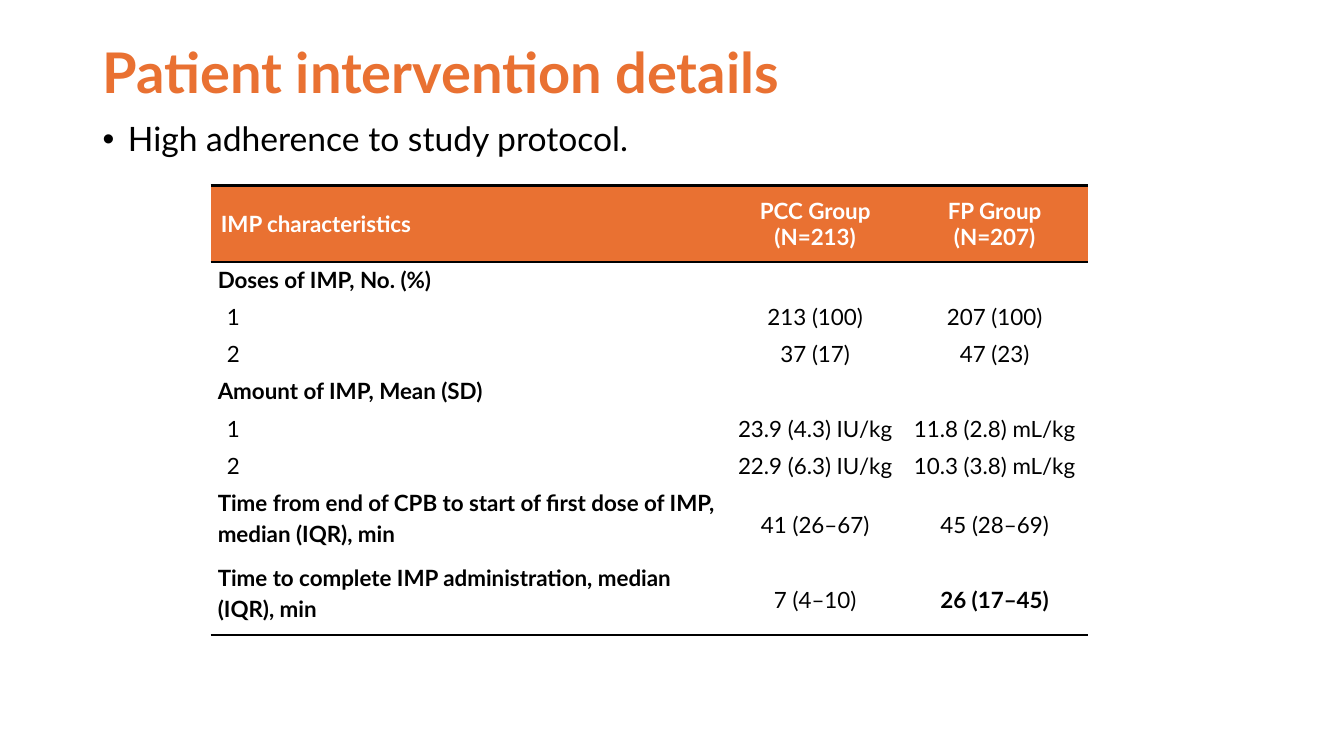
from pptx import Presentation
from pptx.dml.color import RGBColor
from pptx.enum.text import MSO_ANCHOR, PP_ALIGN
from pptx.oxml.ns import qn
from pptx.util import Inches, Pt
from lxml.etree import SubElement

FONT, ORANGE, BLACK, WHITE = "Lato", "E97132", "000000", "FFFFFF"
COLUMN_WIDTHS = [5.14, 1.71, 1.85]
ROW_HEIGHTS = [0.76] + [0.37] * 6 + [0.74] * 2
CHARACTERISTICS = [
    ("IMP characteristics", "PCC Group (N=213)", "FP Group (N=207)"),
    ("Doses of IMP, No. (%)", "", ""),
    ("1", "213 (100)", "207 (100)"),
    ("2", "37 (17)", "47 (23)"),
    ("Amount of IMP, Mean (SD)", "", ""),
    ("1", "23.9 (4.3) IU/kg", "11.8 (2.8) mL/kg"),
    ("2", "22.9 (6.3) IU/kg", "10.3 (3.8) mL/kg"),
    ("Time from end of CPB to start of first dose of IMP, median (IQR), min",
     "41 (26–67)", "45 (28–69)"),
    ("Time to complete IMP administration, median (IQR), min",
     "7 (4–10)", "26 (17–45)"),
]
HIGHLIGHT = "26 (17–45)"


def rgb(value):
    return RGBColor.from_string(value)


class SlideBuilder:
    def __init__(self, page):
        self.page = page

    def style(self, para, size, color, bold=False):
        para.font.name = FONT
        para.font.size = Pt(size)
        para.font.bold = bold
        para.font.color.rgb = rgb(color)

    def indent(self, para, left, first=0):
        properties = para._p.get_or_add_pPr()
        properties.set("marL", str(Inches(left)))
        properties.set("indent", str(Inches(first)))
        return properties

    def text(self, words, left, top, width, height, size, color, bold=False, bullet=False):
        box = self.page.shapes.add_textbox(
            Inches(left), Inches(top), Inches(width), Inches(height))
        box.text_frame.word_wrap = True
        para = box.text_frame.paragraphs[0]
        para.text = words
        para.line_spacing = 0.9
        if bullet:
            properties = self.indent(para, 0.25, -0.25)
            SubElement(properties, qn("a:buFont"), typeface="Arial")
            SubElement(properties, qn("a:buChar"), char="•")
        self.style(para, size, color, bold)

    def borders(self, cell, ruled):
        """Draw black rules on the edges in ruled and clear the others."""
        properties = cell._tc.get_or_add_tcPr()
        for edge in "LRTB":
            line = SubElement(properties, qn(f"a:ln{edge}"), w=str(Pt(2)))
            if edge in ruled:
                fill = SubElement(line, qn("a:solidFill"))
                SubElement(fill, qn("a:srgbClr"), val=BLACK)
            else:
                SubElement(line, qn("a:noFill"))

    def cell(self, cell, words, row, column):
        header, last = row == 0, row == len(CHARACTERISTICS) - 1
        ruled = "TB" if header else "T" * (row == 1) + "B" * last
        self.borders(cell, ruled)
        para = cell.text_frame.paragraphs[0]
        para.text = words
        if column:
            para.alignment = PP_ALIGN.CENTER
        if header:
            cell.fill.solid()
            cell.fill.fore_color.rgb = rgb(ORANGE)
        else:
            cell.fill.background()
            cell.margin_left = cell.margin_right = Inches(0.07)
            cell.margin_top = cell.margin_bottom = 0
            para.line_spacing = 1.15
            para.space_after = Pt(10)
        if header or (column and ROW_HEIGHTS[row] > 0.5):
            cell.vertical_anchor = MSO_ANCHOR.MIDDLE
        dose = column == 0 and words.isdigit()
        if dose:
            self.indent(para, 0.09)
        bold = header or words == HIGHLIGHT or (column == 0 and not dose)
        self.style(para, 16, WHITE if header else BLACK, bold)

    def table(self, rows, left, top):
        frame = self.page.shapes.add_table(
            len(rows), len(COLUMN_WIDTHS), Inches(left), Inches(top),
            Inches(sum(COLUMN_WIDTHS)), Inches(sum(ROW_HEIGHTS)))
        table = frame.table
        table.first_row = table.horz_banding = False
        for column, width in zip(table.columns, COLUMN_WIDTHS):
            column.width = Inches(width)
        for row, height in zip(table.rows, ROW_HEIGHTS):
            row.height = Inches(height)
        for r, values in enumerate(rows):
            for c, words in enumerate(values):
                self.cell(table.cell(r, c), words, r, c)


def main():
    deck = Presentation()
    deck.slide_width, deck.slide_height = Inches(13.33), Inches(7.5)
    builder = SlideBuilder(deck.slides.add_slide(deck.slide_layouts[6]))
    builder.text("High adherence to study protocol.",
                 0.92, 1.17, 11.5, 0.73, 24, BLACK, bullet=True)
    builder.text("Patient intervention details",
                 0.92, 0.4, 11.5, 0.87, 40, ORANGE, bold=True)
    builder.table(CHARACTERISTICS, 2.09, 1.84)
    deck.save("out.pptx")


if __name__ == "__main__":
    main()
